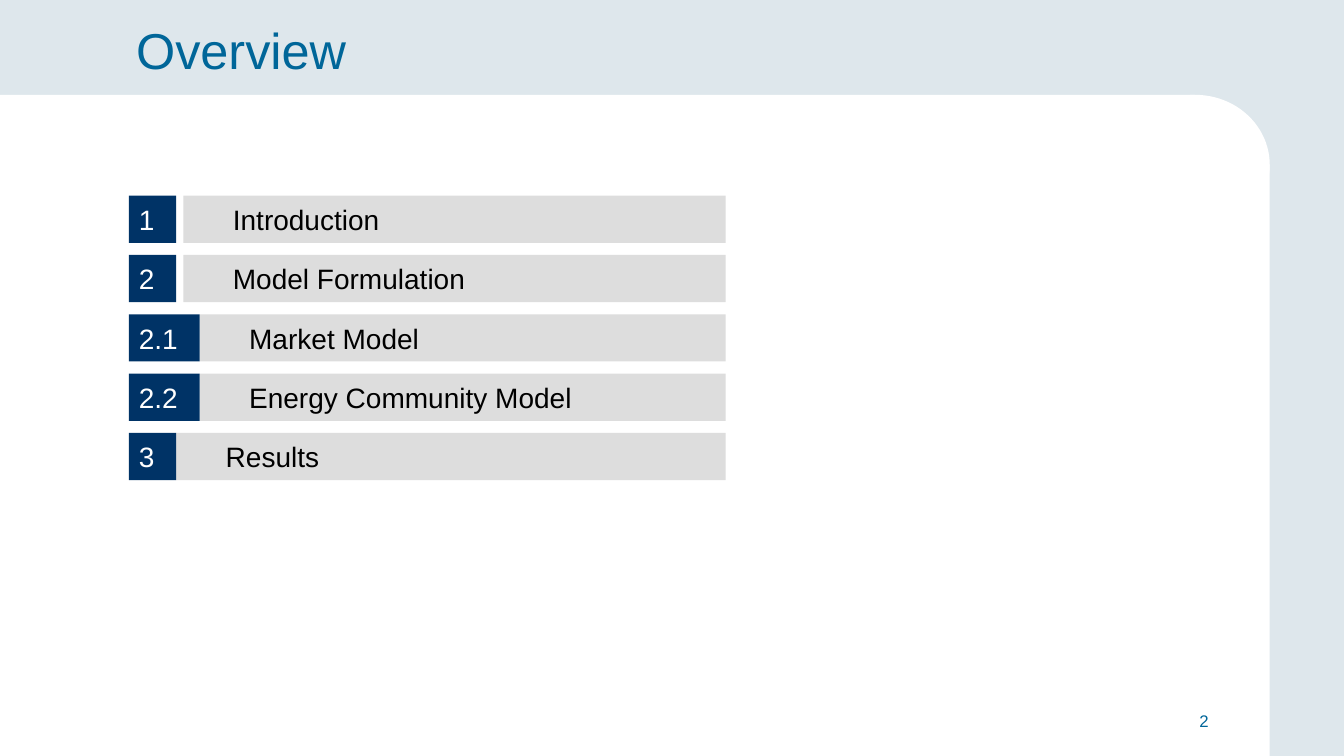
import pptx
import pptx.dml.color
import pptx.enum.shapes
import pptx.enum.text
import pptx.util

Cm = pptx.util.Cm
Pt = pptx.util.Pt
RGBColor = pptx.dml.color.RGBColor
SHAPE = pptx.enum.shapes.MSO_SHAPE
ANCHOR = pptx.enum.text.MSO_ANCHOR
ALIGN = pptx.enum.text.PP_ALIGN

PALE_BLUE = RGBColor(0xDE, 0xE7, 0xEC)
WHITE = RGBColor(0xFF, 0xFF, 0xFF)
BLACK = RGBColor(0x00, 0x00, 0x00)
TEAL = RGBColor(0x00, 0x66, 0x99)
NAVY = RGBColor(0x00, 0x33, 0x66)
GREY = RGBColor(0xDD, 0xDD, 0xDD)

AGENDA = [
    ("1", "Introduction", 1.19, 0.18),
    ("2", "Model Formulation", 1.19, 0.18),
    ("2.1", "Market Model", 1.78, 0),
    ("2.2", "Energy Community Model", 1.78, 0),
    ("3", "Results", 1.19, 0),
]


def apply_format(target, values):
    """Set each attribute named in values on target."""
    for name, value in values.items():
        setattr(target, name, value)


def write(holder, wording, size, color, align=ALIGN.LEFT, anchor=ANCHOR.MIDDLE, indent=0):
    """Fill a shape with one formatted line of text."""
    frame = holder.text_frame
    apply_format(frame, {
        "word_wrap": True, "auto_size": pptx.enum.text.MSO_AUTO_SIZE.NONE,
        "vertical_anchor": anchor,
        "margin_left": Cm(0.25), "margin_right": Cm(0.25),
        "margin_top": Cm(0.13), "margin_bottom": Cm(0.13),
    })
    line = frame.paragraphs[0]
    line.text = wording
    line.alignment = align
    if indent:
        line._p.get_or_add_pPr().set("marL", str(Cm(indent)))
    apply_format(line.runs[0].font, {"name": "Arial", "size": Pt(size)})
    line.runs[0].font.color.rgb = color


def add_block(slide, kind, box, color):
    """Add a plain filled shape in a box given in centimetres."""
    block = slide.shapes.add_shape(kind, *map(Cm, box))
    block.shadow.inherit = False
    block.fill.solid()
    block.fill.fore_color.rgb = color
    block.line.fill.background()
    return block


def add_panel(slide, left, top, width, height):
    """Draw the white panel with its rounded upper right corner."""
    corner_width, corner_height = 3.76, 3.53
    right = left + width
    shoulder = top + corner_height / 2
    add_block(slide, SHAPE.RECTANGLE, (left, top, width - corner_width / 2, height), WHITE)
    add_block(slide, SHAPE.OVAL,
              (right - corner_width, top, corner_width, corner_height), WHITE)
    add_block(slide, SHAPE.RECTANGLE,
              (right - 13.87, shoulder, 13.87, height - corner_height / 2), WHITE)


def add_heading(slide, left, top, width, height):
    """Place and format the slide title."""
    heading = slide.shapes.title
    apply_format(heading, {"left": Cm(left), "top": Cm(top),
                           "width": Cm(width), "height": Cm(height)})
    write(heading, "Overview", 36, TEAL, anchor=ANCHOR.BOTTOM)


def add_agenda(slide, left, top, width, height):
    """Stack the numbered agenda rows evenly in the box."""
    row_height = 1.19
    pitch = (height - row_height) / (len(AGENDA) - 1)
    for row, (number, topic, number_width, gap) in enumerate(AGENDA):
        row_top = top + row * pitch
        offset = number_width + gap
        bar = add_block(slide, SHAPE.RECTANGLE,
                        (left + offset, row_top, width - offset, row_height), GREY)
        write(bar, topic, 20, BLACK, indent=1)
        badge = add_block(slide, SHAPE.RECTANGLE,
                          (left, row_top, number_width, row_height), NAVY)
        write(badge, number, 20, WHITE)


def add_page_number(slide, left, top, width, height):
    """Write the page number at the right of the box."""
    page_number = slide.shapes.add_textbox(Cm(left), Cm(top), Cm(width), Cm(height))
    write(page_number, "2", 12, TEAL, align=ALIGN.RIGHT)


def main():
    """Build the overview slide and save it."""
    deck = pptx.Presentation()
    apply_format(deck, {"slide_width": Cm(33.87), "slide_height": Cm(19.05)})
    slide = deck.slides.add_slide(deck.slide_layouts[5])
    slide.background.fill.solid()
    slide.background.fill.fore_color.rgb = PALE_BLUE
    add_panel(slide, 0, 2.39, 32, 16.66)
    add_heading(slide, 3.18, 0.33, 27.51, 1.8)
    add_agenda(slide, 3.25, 4.93, 15.04, 7.17)
    add_page_number(slide, 24.28, 17.65, 6.43, 1.02)
    deck.save("out.pptx")


if __name__ == "__main__":
    main()
